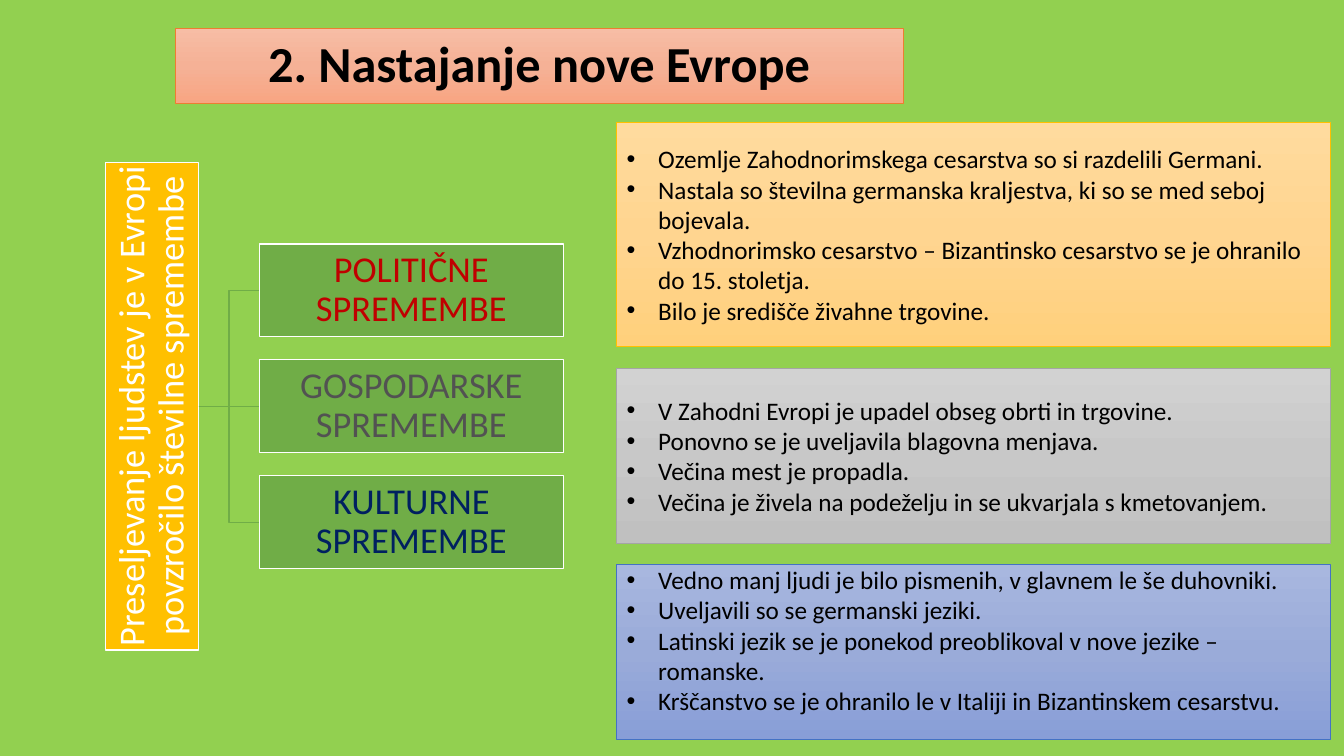
from dataclasses import dataclass

from lxml import etree
from pptx import Presentation
from pptx import util as u
from pptx.dml.color import RGBColor
from pptx.enum import shapes, text
from pptx.oxml.ns import qn


@dataclass(frozen=True)
class Theme:
    face: str = "Calibri"
    head: int = 36
    node: int = 26
    body: int = 18
    back: str = "92D050"
    ink: str = "000000"
    white: str = "FFFFFF"
    gold: str = "FFC000"
    green: str = "70AD47"
    red: str = "C00000"
    gray: str = "525252"
    navy: str = "002060"
    peach: tuple = ("F7BDA5", "F5B196", "F8A582")
    amber: tuple = ("FFDB9E", "FFD590", "FFD07C")
    silver: tuple = ("D2D2D2", "C8C8C8", "C0C0C0")
    blue: tuple = ("A8B7DF", "9AABD9", "889ED7")
    rim: str = "ED7D31"
    steel: str = "A5A5A5"
    azure: str = "4472C4"


def rgb(code):
    return RGBColor.from_string(code)


def write(shape, lines, size, color, face, bold=False, align=text.PP_ALIGN.LEFT,
          anchor=text.MSO_ANCHOR.MIDDLE, space=1.0, pad=(7.2, 3.6), dots=False):
    """Fill a shape with paragraphs; pad is (side, top and bottom) in points."""
    frame = shape.text_frame
    frame.word_wrap = True
    frame.vertical_anchor = anchor
    frame.margin_left = frame.margin_right = u.Pt(pad[0])
    frame.margin_top = frame.margin_bottom = u.Pt(pad[1])
    for i, line in enumerate(lines):
        para = frame.add_paragraph() if i else frame.paragraphs[0]
        para.alignment = align
        para.line_spacing = space
        if dots:
            props = para._p.get_or_add_pPr()
            props.set("marL", str(u.Pt(22.5)))
            props.set("indent", str(-u.Pt(22.5)))
            etree.SubElement(props, qn("a:buFont"), typeface="Arial")
            etree.SubElement(props, qn("a:buChar"), char="•")
        run = para.add_run()
        run.text = line
        font = run.font
        font.name, font.size, font.bold = face, u.Pt(size), bold
        font.color.rgb = rgb(color)


class Deck:
    def __init__(self, theme):
        self.theme = theme
        self.file = Presentation()
        self.file.slide_width, self.file.slide_height = u.Pt(960), u.Pt(540)
        self.slide = self.file.slides.add_slide(self.file.slide_layouts[6])
        fill = self.slide.background.fill
        fill.solid()
        fill.fore_color.rgb = rgb(theme.back)

    def rect(self, box, fill, line, width):
        """Draw a rectangle; a tuple of colours as fill makes a downward gradient."""
        shape = self.slide.shapes.add_shape(
            shapes.MSO_SHAPE.RECTANGLE, *(u.Pt(n) for n in box))
        shape.shadow.inherit = False
        shape.line.color.rgb = rgb(line)
        shape.line.width = u.Pt(width)
        if isinstance(fill, tuple):
            self.blend(shape, fill)
        else:
            shape.fill.solid()
            shape.fill.fore_color.rgb = rgb(fill)
        return shape

    def blend(self, shape, colors):
        shape.fill.gradient()
        shape.fill.gradient_angle = 270
        stops = shape._element.spPr.find(".//" + qn("a:gsLst"))
        for old in list(stops):
            stops.remove(old)
        for i, color in enumerate(colors):
            stop = etree.SubElement(stops, qn("a:gs"), pos=str(i * 50000))
            etree.SubElement(stop, qn("a:srgbClr"), val=color)

    def title(self, box, line):
        t = self.theme
        write(self.rect(box, t.peach, t.rim, 0.5), [line], t.head, t.ink, t.face,
              bold=True, align=text.PP_ALIGN.CENTER, space=0.9)

    def node(self, box, line, fill, color):
        t = self.theme
        shape = self.rect(box, fill, t.white, 1)
        write(shape, [line], t.node, color, t.face,
              align=text.PP_ALIGN.CENTER, space=0.9, pad=(1.4, 1.4))
        return shape

    def panel(self, box, lines, fill, line, **form):
        t = self.theme
        write(self.rect(box, fill, line, 0.5), lines, t.body, t.ink, t.face,
              dots=True, **form)

    def link(self, start, end, kind):
        """Join the right side of start to the left side of end."""
        wire = self.slide.shapes.add_connector(kind, 0, 0, 0, 0)
        wire.begin_connect(start, 3)
        wire.end_connect(end, 1)
        wire.line.color.rgb = rgb(self.theme.green)
        wire.line.width = u.Pt(1)
        etree.SubElement(wire._element.spPr, qn("a:effectLst"))


def main():
    t = Theme()
    deck = Deck(t)
    deck.title((125.3, 20.2, 519.8, 54), "2. Nastajanje nove Evrope")

    thick, mid, step = 66.4, 290.2, 82.8
    root = deck.node(
        (75.6, mid - 174.2, thick, 348.4),
        "Preseljevanje ljudstev je v Evropi povzročilo številne spremembe",
        t.gold, t.white)
    root.text_frame._txBody.bodyPr.set("vert", "vert270")

    elbow, straight = shapes.MSO_CONNECTOR.ELBOW, shapes.MSO_CONNECTOR.STRAIGHT
    topics = [("POLITIČNE SPREMEMBE", t.red, elbow),
              ("GOSPODARSKE SPREMEMBE", t.gray, straight),
              ("KULTURNE SPREMEMBE", t.navy, elbow)]
    for i, (name, color, kind) in enumerate(topics):
        top = mid - thick / 2 + (i - 1) * step
        leaf = deck.node((185.2, top, 217.4, thick), name, t.green, color)
        deck.link(root, leaf, kind)

    left, wide = 440.6, 509.8
    deck.panel((left, 87.2, wide, 160.4), [
        "Ozemlje Zahodnorimskega cesarstva so si razdelili Germani.",
        "Nastala so številna germanska kraljestva, ki so se med seboj bojevala.",
        "Vzhodnorimsko cesarstvo – Bizantinsko cesarstvo se je ohranilo "
        "do 15. stoletja.",
        "Bilo je središče živahne trgovine.",
    ], t.amber, t.gold)
    deck.panel((left, 262.8, wide, 125.3), [
        "V Zahodni Evropi je upadel obseg obrti in trgovine.",
        "Ponovno se je uveljavila blagovna menjava.",
        "Večina mest je propadla.",
        "Večina je živela na podeželju in se ukvarjala s kmetovanjem.",
    ], t.silver, t.steel)
    deck.panel((left, 403.2, wide, 125.3), [
        "Vedno manj ljudi je bilo pismenih, v glavnem le še duhovniki.",
        "Uveljavili so se germanski jeziki.",
        "Latinski jezik se je ponekod preoblikoval v nove jezike – romanske.",
        "Krščanstvo se je ohranilo le v Italiji in Bizantinskem cesarstvu.",
    ], t.blue, t.azure, anchor=text.MSO_ANCHOR.TOP, pad=(7.2, 0))

    deck.file.save("out.pptx")


if __name__ == "__main__":
    main()
